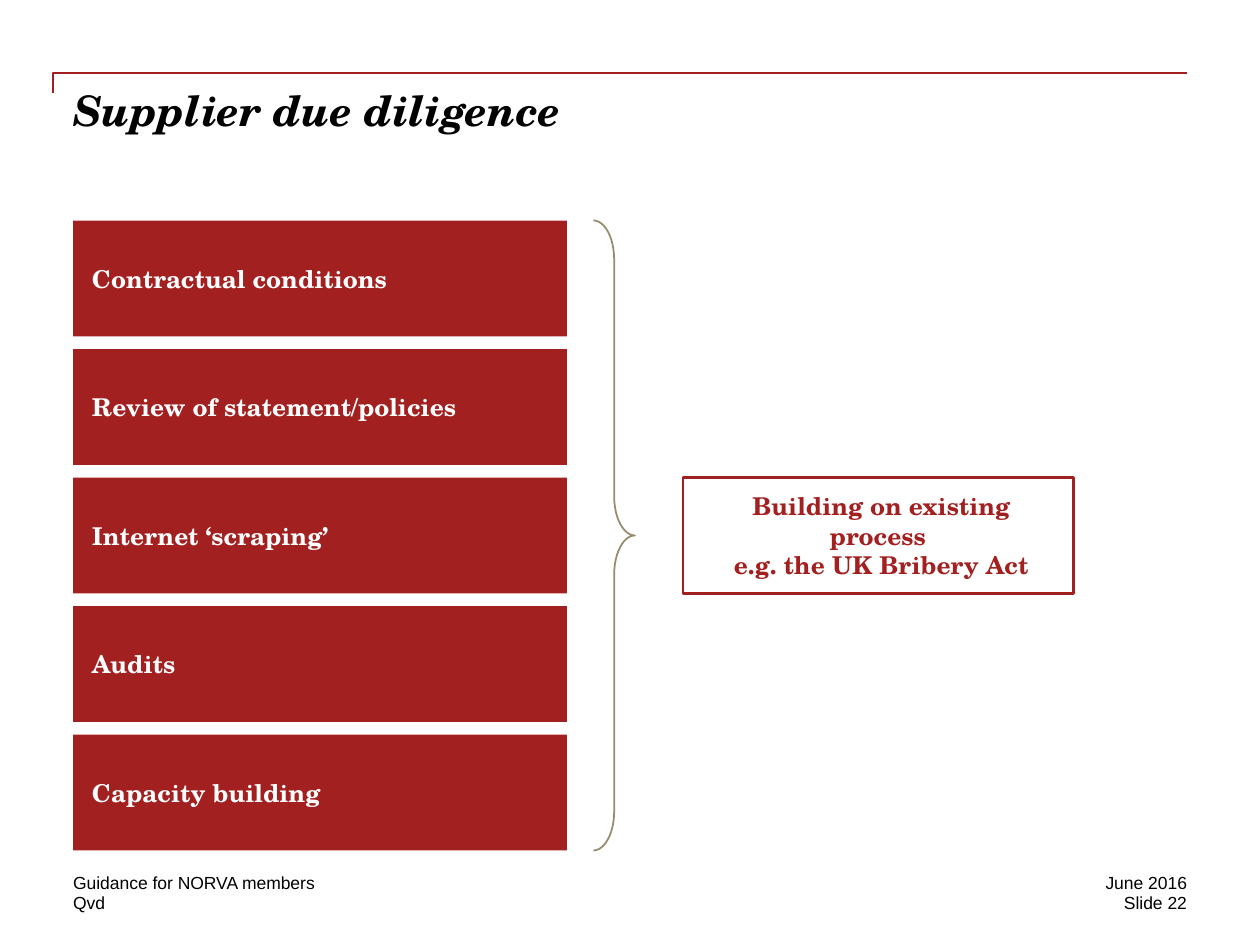
import pptx
import pptx.dml.color
import pptx.enum.shapes
import pptx.enum.text
import pptx.oxml.ns
import pptx.util
from lxml import etree

Inches = pptx.util.Inches
RGBColor = pptx.dml.color.RGBColor
MSO_SHAPE = pptx.enum.shapes.MSO_SHAPE
ANCHOR = pptx.enum.text.MSO_ANCHOR
ALIGN = pptx.enum.text.PP_ALIGN

RED = RGBColor(0xA3, 0x20, 0x20)
TAUPE = RGBColor(0x96, 0x8C, 0x6D)
WHITE = RGBColor(0xFF, 0xFF, 0xFF)
BLACK = RGBColor(0, 0, 0)

LEFT, RIGHT = 0.58, 9.42
BOX_TOP, BOX_HEIGHT, BOX_PITCH = 1.75, 0.92, 1.02
CHECKS = ["Contractual conditions", "Review of statement/policies",
          "Internet ‘scraping’", "Audits", "Capacity building"]


def write_text(shape, text, font="TeX Gyre Schola", size=14, color=BLACK,
               bold=False, italic=False, align=ALIGN.LEFT, anchor=ANCHOR.TOP,
               insets=(0, 0, 0, 0), space_after=0):
    frame = shape.text_frame
    frame.word_wrap = True
    frame.vertical_anchor = anchor
    (frame.margin_left, frame.margin_top,
     frame.margin_right, frame.margin_bottom) = map(Inches, insets)
    paragraph = frame.paragraphs[0]
    paragraph.text = text
    paragraph.alignment = align
    paragraph.space_after = pptx.util.Pt(space_after)
    for run in paragraph.runs:
        run.font.name = font
        run.font.size = pptx.util.Pt(size)
        run.font.bold = bold
        run.font.italic = italic
        run.font.color.rgb = color


class SlideBuilder:
    """Holds the slide and draws each kind of element in its style."""

    def __init__(self, slide):
        self.slide = slide

    def text(self, text, left, top, width, height, **style):
        shape = self.slide.shapes.add_textbox(*map(Inches, (left, top, width, height)))
        write_text(shape, text, **style)

    def footer(self, text, left, top, width, **style):
        self.text(text, left, top, width, 0.17, font="Arial", size=10, **style)

    def shape(self, kind, left, top, width, height, fill=None, line=None, weight=1):
        shape = self.slide.shapes.add_shape(kind, *map(Inches, (left, top, width, height)))
        shape.shadow.inherit = False
        if fill is None:
            shape.fill.background()
        else:
            shape.fill.solid()
            shape.fill.fore_color.rgb = fill
        if line is None:
            shape.line.fill.background()
        else:
            shape.line.color.rgb = line
            shape.line.width = pptx.util.Pt(weight)
        return shape

    def box(self, text, left, top, width, fill, color, line=None, **style):
        shape = self.shape(MSO_SHAPE.RECTANGLE, left, top, width, BOX_HEIGHT,
                           fill, line, 1.5)
        write_text(shape, text, color=color, bold=True, anchor=ANCHOR.MIDDLE,
                   insets=(0.15, 0.1, 0.1, 0.1), **style)

    def brace(self, left, top, width, height):
        shape = self.shape(MSO_SHAPE.RIGHT_BRACE, left, top, width, height, line=TAUPE)
        shape.adjustments[0] = 0.94

    def corner_rule(self, left, top, width, drop):
        center_x, center_y = left + width / 2, top + drop / 2
        connector = self.slide.shapes.add_connector(
            pptx.enum.shapes.MSO_CONNECTOR.ELBOW,
            Inches(center_x + drop / 2), Inches(center_y + width / 2),
            Inches(center_x - drop / 2), Inches(center_y - width / 2))
        connector.line.color.rgb = RED
        connector.line.width = pptx.util.Pt(1)
        properties = connector._element.spPr
        properties.find(pptx.oxml.ns.qn("a:xfrm")).set("rot", str(90 * 60000))
        properties.find(pptx.oxml.ns.qn("a:prstGeom")).set("prst", "bentConnector2")
        etree.SubElement(properties, pptx.oxml.ns.qn("a:effectLst"))


def main():
    presentation = pptx.Presentation()
    presentation.slide_width = Inches(10)
    presentation.slide_height = Inches(7.5)
    builder = SlideBuilder(presentation.slides.add_slide(presentation.slide_layouts[6]))

    builder.corner_rule(0.42, 0.58, 9, 0.16)
    builder.text("Supplier due diligence", LEFT, 0.67, 8.83, 0.9,
                 size=24, bold=True, italic=True)

    for index, check in enumerate(CHECKS):
        builder.box(check, LEFT, BOX_TOP + index * BOX_PITCH, 3.92, RED, WHITE)
    builder.brace(4.71, BOX_TOP, 0.33, 5)
    builder.box("Building on existing process \ve.g. the UK Bribery Act",
                5.42, BOX_TOP + 2 * BOX_PITCH, 3.1, WHITE, RED, line=RED,
                align=ALIGN.CENTER, space_after=4)

    builder.footer("Guidance for NORVA members", LEFT, 6.92, 2.92, anchor=ANCHOR.BOTTOM)
    builder.footer("Qvd", LEFT, 7.08, 2.83)
    for text, top in (("June 2016", 6.92), ("Slide 22", 7.08)):
        builder.footer(text, RIGHT - 1.67, top, 1.67, align=ALIGN.RIGHT)

    presentation.save("out.pptx")


if __name__ == "__main__":
    main()
